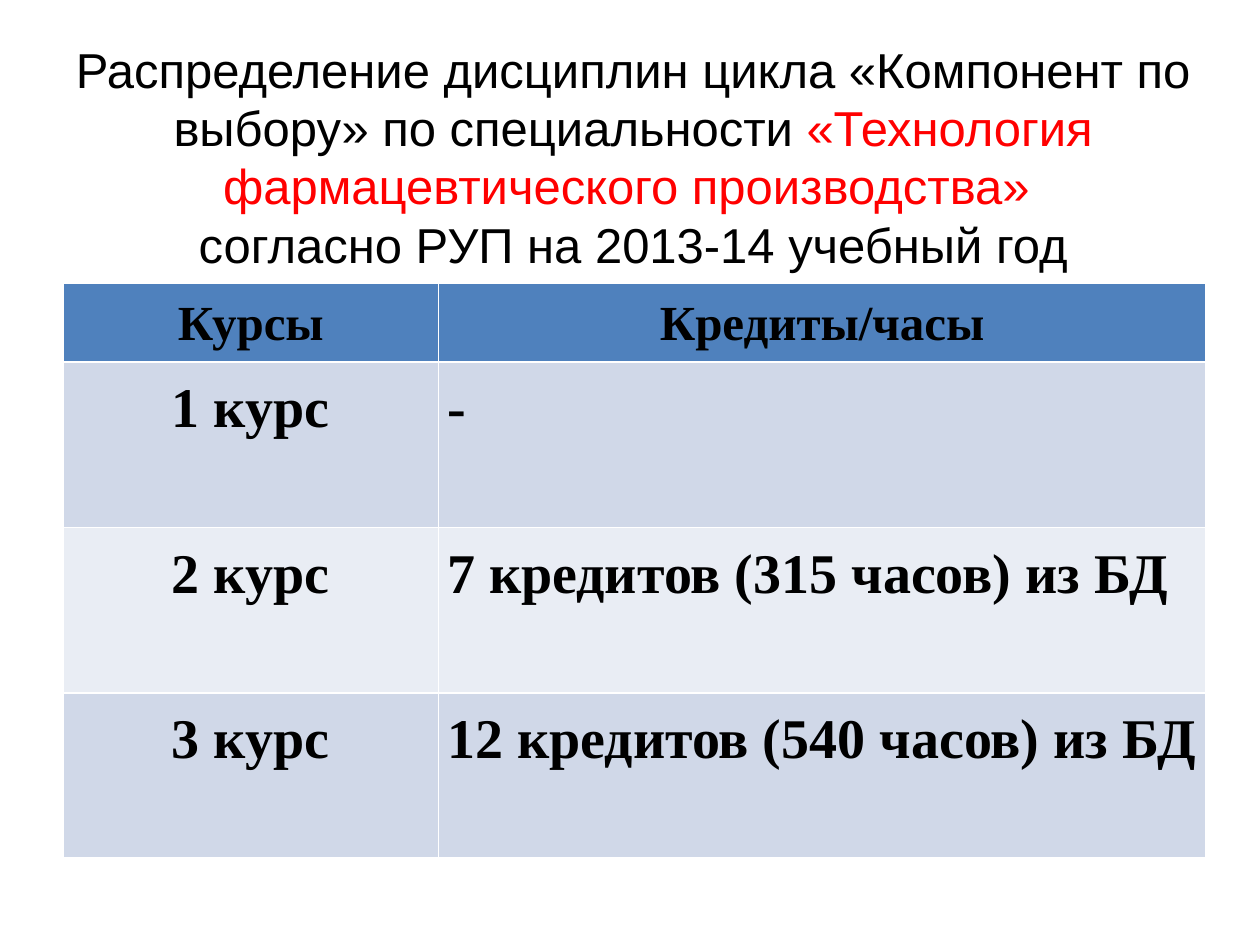
from pptx import Presentation, util as u
from pptx.dml import color
from pptx.enum import text

COLORS = {"black": "000000", "red": "FF0000", "header": "4F81BD",
          "band_dark": "D0D8E8", "band_light": "E9EDF4"}


class CourseSlide:
    title_font = "Arial"
    table_font = "Times New Roman"

    def __init__(self, presentation):
        self.slide = presentation.slides.add_slide(presentation.slide_layouts[5])

    def rgb(self, name):
        return color.RGBColor.from_string(COLORS[name])

    def title(self, lines, left, top, width, height):
        shape = self.slide.shapes.title
        shape.left, shape.top = u.Pt(left), u.Pt(top)
        shape.width, shape.height = u.Pt(width), u.Pt(height)
        frame = shape.text_frame
        frame.word_wrap = True
        frame.auto_size = text.MSO_AUTO_SIZE.NONE
        frame.vertical_anchor = text.MSO_ANCHOR.MIDDLE
        frame.margin_bottom = u.Pt(14)
        paragraph = frame.paragraphs[0]
        paragraph.alignment = text.PP_ALIGN.CENTER
        paragraph.line_spacing = u.Pt(33.3)
        paragraph.font.name = self.title_font
        paragraph.font.size = u.Pt(28)
        for index, line in enumerate(lines):
            if index:
                paragraph.add_line_break()
            for words, name in line:
                run = paragraph.add_run()
                run.text = words
                run.font.color.rgb = self.rgb(name)

    def table(self, rows, left, top, widths, heights):
        table = self.slide.shapes.add_table(
            len(rows), len(widths), u.Pt(left), u.Pt(top),
            u.Pt(sum(widths)), u.Pt(sum(heights))).table
        for column, width in zip(table.columns, widths):
            column.width = u.Pt(width)
        for index, (row, height) in enumerate(zip(rows, heights)):
            table.rows[index].height = u.Pt(height)
            for column, words in enumerate(row):
                self.cell(table.cell(index, column), words, index, column)

    def cell(self, cell, words, row, column):
        header = row == 0
        fill = "header" if header else "band_dark" if row % 2 else "band_light"
        cell.fill.solid()
        cell.fill.fore_color.rgb = self.rgb(fill)
        cell.margin_left = cell.margin_right = u.Pt(5)
        cell.margin_top = cell.margin_bottom = 0
        cell.text = words
        paragraph = cell.text_frame.paragraphs[0]
        centred = header or column == 0
        paragraph.alignment = text.PP_ALIGN.CENTER if centred else text.PP_ALIGN.JUSTIFY
        paragraph.line_spacing = 1.25
        paragraph.font.name = self.table_font
        paragraph.font.size = u.Pt(28 if header else 32)
        paragraph.font.bold = True
        paragraph.font.color.rgb = self.rgb("black")


def main():
    presentation = Presentation()
    presentation.slide_width, presentation.slide_height = u.Pt(720), u.Pt(540)
    page = CourseSlide(presentation)
    page.title([
        [("Распределение дисциплин цикла «Компонент по выбору» по специальности ", "black"),
         ("«Технология фармацевтического производства» ", "red")],
        [("согласно РУП на 2013-14 учебный год", "black")],
    ], 20, 21.6, 683.5, 146)
    page.table([
        ("Курсы", "Кредиты/часы"),
        ("1 курс", "-"),
        ("2 курс", "7 кредитов (315 часов) из БД"),
        ("3 курс", "12 кредитов (540 часов) из БД"),
    ], 36, 162, [214.5, 438.5], [45] + [94.5] * 3)
    presentation.save("out.pptx")


if __name__ == "__main__":
    main()
